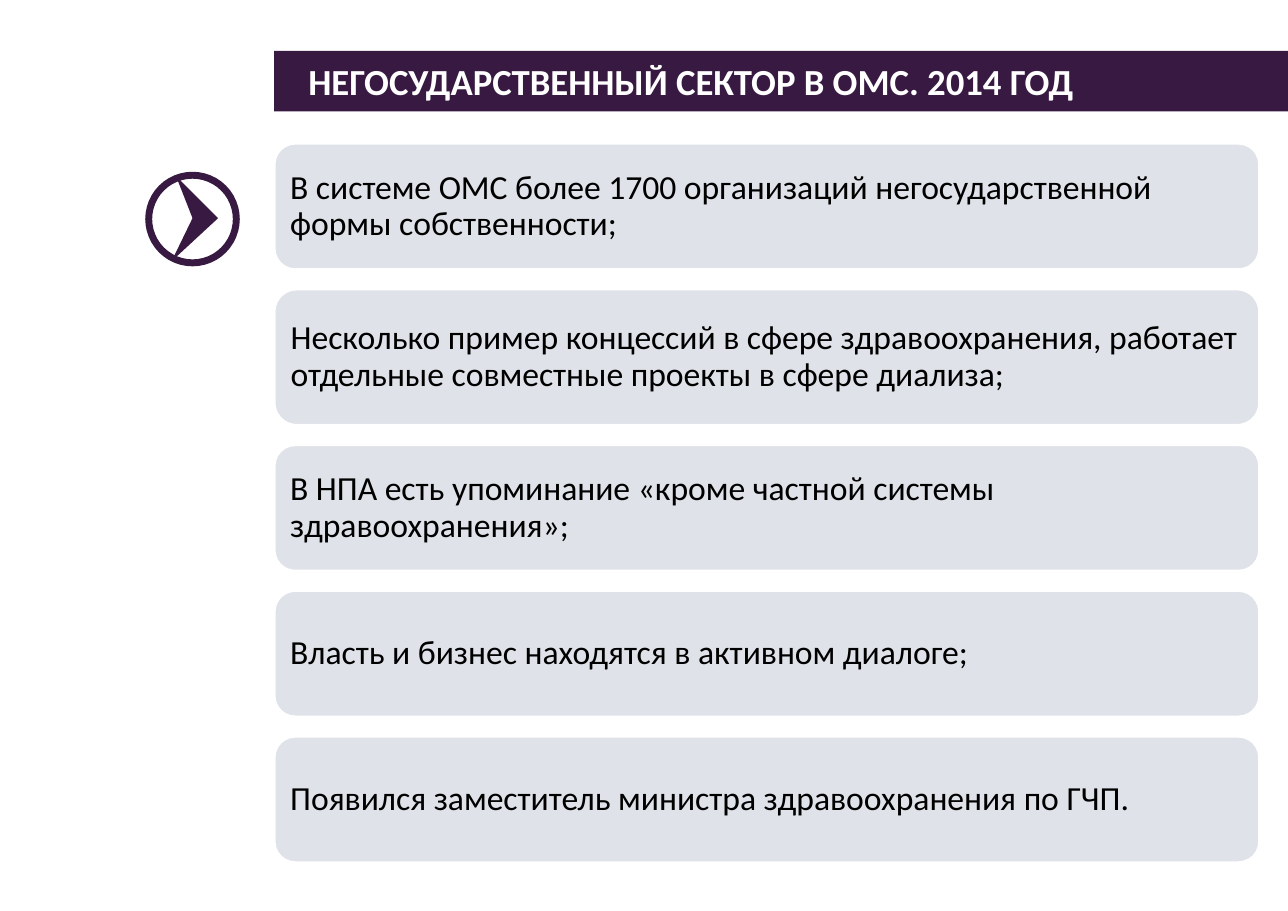
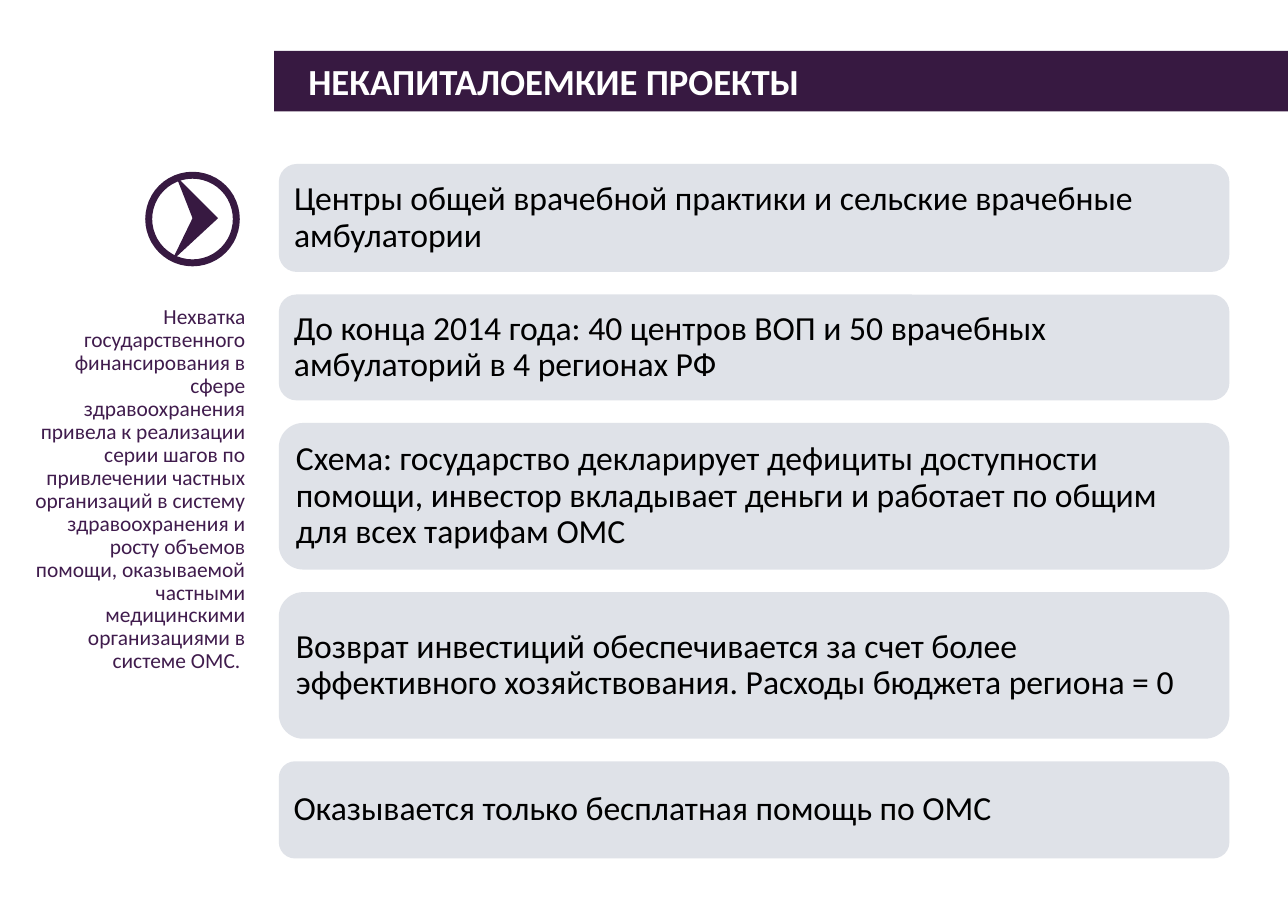
import pptx
import pptx.dml.color
import pptx.enum.shapes
import pptx.enum.text
import pptx.oxml.ns
import pptx.util
from lxml import etree

Cm = pptx.util.Cm
Pt = pptx.util.Pt
RGBColor = pptx.dml.color.RGBColor
Shape = pptx.enum.shapes.MSO_SHAPE
Align = pptx.enum.text.PP_ALIGN
Anchor = pptx.enum.text.MSO_ANCHOR
AutoSize = pptx.enum.text.MSO_AUTO_SIZE

PLUM = RGBColor(0x37, 0x19, 0x41)
NOTE_PLUM = RGBColor(0x40, 0x1C, 0x4D)
CARD_GREY = RGBColor(0x96, 0xA0, 0xB4)
WHITE = RGBColor(0xFF, 0xFF, 0xFF)
BLACK = RGBColor(0, 0, 0)
FONT = "Calibri"

TITLE_BOX = (6.32, 1.17, 23.38, 1.4)
EMBLEM_BOX = (3.35, 3.96, 2.18, 2.18)
NOTE_BOX = (0.53, 6.93, 5.38, 8.81)
CHEVRON = [(1.09, 1.07), (0.71, 0.1), (1.68, 1.07), (0.61, 2.06)]

SECTOR_CARDS = [
    (2.92, "В системе ОМС более 1700 организаций негосударственной формы собственности;"),
    (3.15, "Несколько пример концессий в сфере здравоохранения, работает отдельные совместные проекты в сфере диализа;"),
    (2.92, "В НПА есть упоминание «кроме частной системы здравоохранения»;"),
    (2.92, "Власть и бизнес находятся в активном диалоге;"),
    (2.92, "Появился заместитель министра здравоохранения по ГЧП."),
]
PROJECT_CARDS = [
    (2.49, "Центры общей врачебной практики и сельские врачебные амбулатории"),
    (2.44, "До конца 2014 года: 40 центров ВОП и 50 врачебных амбулаторий в 4 регионах РФ"),
    (3.38, "Схема: государство декларирует дефициты доступности помощи, инвестор вкладывает деньги и работает по общим для всех тарифам ОМС"),
    (3.38, "Возврат инвестиций обеспечивается за счет более эффективного хозяйствования. Расходы бюджета региона = 0"),
    (2.24, "Оказывается только бесплатная помощь по ОМС"),
]
FUNDING_NOTE = (
    "Нехватка государственного финансирования в сфере здравоохранения привела к реализации "
    "серии шагов по привлечении частных организаций в систему здравоохранения и росту объемов "
    "помощи, оказываемой частными медицинскими организациями в системе ОМС. "
)


def write_text(shape, text, size, color, align=Align.LEFT, anchor=Anchor.MIDDLE, bold=False, spacing=1.0):
    """Put one formatted paragraph into a shape."""
    frame = shape.text_frame
    frame.word_wrap = True
    frame.auto_size = AutoSize.NONE
    frame.vertical_anchor = anchor
    para = frame.paragraphs[0]
    para.text = text
    para.alignment = align
    para.line_spacing = spacing
    para.font.name = FONT
    para.font.size = Pt(size)
    para.font.bold = bold
    para.font.color.rgb = color


def paint(shape, fill):
    """Give a shape a plain fill without shadow or outline."""
    shape.shadow.inherit = False
    shape.fill.solid()
    shape.fill.fore_color.rgb = fill
    shape.line.fill.background()


def set_opacity(shape, percent):
    """Make the solid fill of a shape translucent."""
    color = shape.fill._xPr.find(".//" + pptx.oxml.ns.qn("a:srgbClr"))
    etree.SubElement(color, pptx.oxml.ns.qn("a:alpha"), val=str(percent * 1000))


def add_title(page, box, text):
    """Turn the title placeholder into the dark band."""
    title = page.shapes.title
    title.left, title.top, title.width, title.height = map(Cm, box)
    title.fill.solid()
    title.fill.fore_color.rgb = PLUM
    write_text(title, text, 24, WHITE, bold=True)
    frame = title.text_frame
    frame.margin_left, frame.margin_right = Cm(0.79), Cm(0.28)
    frame.margin_top = frame.margin_bottom = Cm(0.13)


def add_emblem(page, box):
    """Draw the ring with the chevron inside."""
    left, top, width, height = box
    stroke = 0.16
    ring = page.shapes.add_shape(
        Shape.OVAL, Cm(left + stroke / 2), Cm(top + stroke / 2), Cm(width - stroke), Cm(height - stroke))
    paint(ring, WHITE)
    ring.line.color.rgb = PLUM
    ring.line.width = Cm(stroke)
    points = [(Cm(left + x), Cm(top + y)) for x, y in CHEVRON]
    outline = page.shapes.build_freeform(*points[0])
    outline.add_line_segments(points[1:], close=True)
    paint(outline.convert_to_shape(), PLUM)


def add_cards(page, left, top, width, gap, cards, outlined=False):
    """Stack rounded cards downwards with equal gaps."""
    for height, text in cards:
        card = page.shapes.add_shape(Shape.ROUNDED_RECTANGLE, Cm(left), Cm(top), Cm(width), Cm(height))
        paint(card, CARD_GREY)
        set_opacity(card, 30)
        if outlined:
            card.line.color.rgb = WHITE
            card.line.width = Pt(2)
        write_text(card, text, 22, BLACK, spacing=0.9)
        frame = card.text_frame
        frame.margin_left = frame.margin_right = Cm(0.23)
        frame.margin_top = frame.margin_bottom = Cm(0.23)
        top += height + gap


def add_note(page, box, text):
    """Place the right-aligned side note."""
    note = page.shapes.add_textbox(*map(Cm, box))
    write_text(note, text, 14, NOTE_PLUM, Align.RIGHT, Anchor.TOP, spacing=Pt(15))


def add_page(deck, title):
    """Add a slide with the shared title band and emblem."""
    page = deck.slides.add_slide(deck.slide_layouts[5])
    add_title(page, TITLE_BOX, title)
    add_emblem(page, EMBLEM_BOX)
    return page


def main():
    """Build and save the deck."""
    deck = pptx.Presentation()
    deck.slide_width, deck.slide_height = Cm(29.7), Cm(21)
    sector = add_page(deck, "НЕГОСУДАРСТВЕННЫЙ СЕКТОР В ОМС. 2014 ГОД")
    add_cards(sector, 6.32, 3.3, 22.73, 0.44, SECTOR_CARDS, outlined=True)
    projects = add_page(deck, "НЕКАПИТАЛОЕМКИЕ ПРОЕКТЫ")
    add_cards(projects, 6.43, 3.78, 21.92, 0.52, PROJECT_CARDS)
    add_note(projects, NOTE_BOX, FUNDING_NOTE)
    deck.save("out.pptx")


if __name__ == "__main__":
    main()
